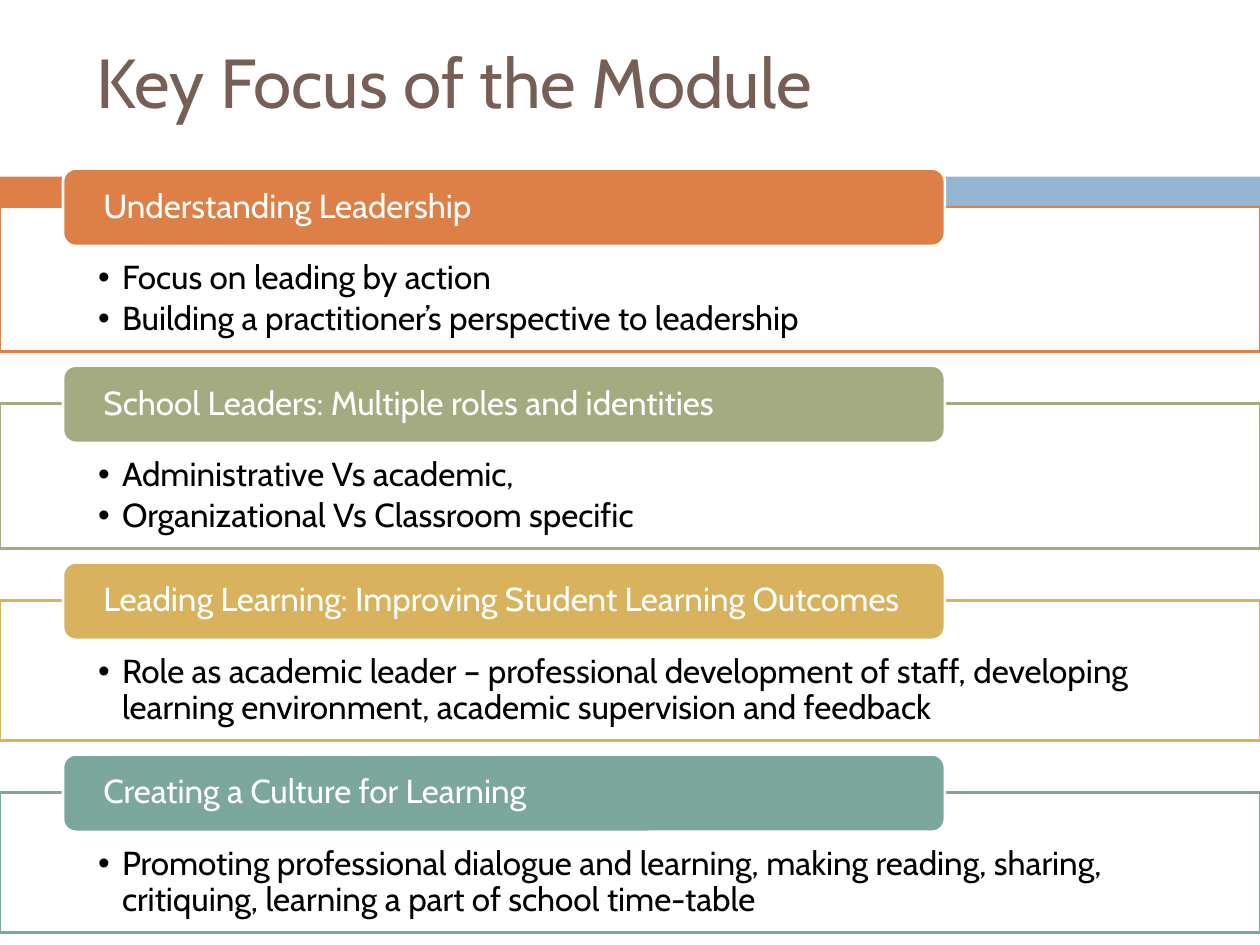
from lxml.etree import SubElement
from pptx import Presentation
from pptx.dml.color import RGBColor
from pptx.enum.shapes import MSO_SHAPE as Preset
from pptx.enum.text import MSO_ANCHOR as Anchor, MSO_AUTO_SIZE as AutoSize, PP_ALIGN as Align
from pptx.oxml.ns import qn
from pptx.util import Cm, Pt

WHITE, BLACK, BROWN = "FFFFFF", "000000", "775F55"
ORANGE, BLUE, GREEN, GOLD, TEAL = "DD8047", "94B6D2", "A5AB81", "D8B25C", "7BA79D"

SECTIONS = [
    (ORANGE, 2.92, "Understanding Leadership",
     ["Focus on leading by action",
      "Building a practitioner’s perspective to leadership"]),
    (GREEN, 2.92, "School Leaders: Multiple roles and identities",
     ["Administrative Vs academic,",
      "Organizational Vs Classroom specific"]),
    (GOLD, 2.82, "Leading Learning: Improving Student Learning Outcomes",
     ["Role as academic leader – professional development of staff, developing "
      "learning environment, academic supervision and feedback"]),
    (TEAL, 2.82, "Creating a Culture for Learning",
     ["Promoting professional dialogue and learning, making reading, sharing, "
      "critiquing, learning a part of school time-table"]),
]
FIRST_TOP, GAP, LABEL_RISE = 4.17, 1.05, 0.77


def color(value):
    return RGBColor.from_string(value)


def apply(target, values):
    for name, value in values.items():
        setattr(target, name, value)


class SlideStyle:
    font = "Cabin"
    text_size = 19
    line_width = 1.5

    def __init__(self, page):
        self.page = page

    def place(self, shape, left, top, width, height):
        apply(shape, {"left": Cm(left), "top": Cm(top),
                      "width": Cm(width), "height": Cm(height)})

    def set_text(self, shape, lines, size, ink, anchor, insets, spacing):
        left, top, right, bottom = (Cm(inset) for inset in insets)
        frame = shape.text_frame
        apply(frame, {"word_wrap": True, "auto_size": AutoSize.NONE,
                      "vertical_anchor": anchor, "margin_left": left,
                      "margin_top": top, "margin_right": right,
                      "margin_bottom": bottom})
        frame.text = "\n".join(lines)
        for para in frame.paragraphs:
            apply(para, {"alignment": Align.LEFT, "space_before": Pt(0), **spacing})
            for span in para.runs:
                apply(span.font, {"name": self.font, "size": Pt(size), "bold": False})
                span.font.color.rgb = color(ink)

    def paint(self, shape, fill, line=None):
        shape.fill.solid()
        shape.fill.fore_color.rgb = color(fill)
        if line:
            shape.line.color.rgb = color(line)
            shape.line.width = Pt(self.line_width)
        else:
            shape.line.fill.background()

    def title(self, text):
        shape = self.page.shapes.title
        self.place(shape, 1.7, 0.64, 22.66, 1.96)
        self.set_text(shape, [text], 39.6, BROWN, Anchor.MIDDLE,
                      (0.25, 0.13, 0.25, 0.13), {})

    def bar(self, left, width, fill):
        shape = self.page.shapes.add_shape(
            Preset.RECTANGLE, Cm(left), Cm(3.56), Cm(width), Cm(0.59))
        shape.shadow.inherit = False
        self.paint(shape, fill)

    def list_box(self, shape, top, height, accent, items):
        self.place(shape, 0, top, 25.4, height)
        self.paint(shape, WHITE, accent)
        tint = shape._element.spPr.find(qn("a:solidFill"))[0]
        SubElement(tint, qn("a:alpha"), val="90000")
        self.set_text(shape, items, self.text_size, BLACK, Anchor.TOP,
                      (1.98, 1.09, 1.98, 0.38),
                      {"line_spacing": 0.9, "space_after": Pt(2.85)})
        for para in shape.text_frame.paragraphs:
            props = para._p.get_or_add_pPr()
            props.set("marL", str(Cm(0.48)))
            props.set("indent", str(-Cm(0.48)))
            SubElement(props, qn("a:buFont"), typeface="Arial")
            SubElement(props, qn("a:buChar"), char="•")

    def label(self, top, fill, text):
        shape = self.page.shapes.add_shape(
            Preset.ROUNDED_RECTANGLE, Cm(1.27), Cm(top), Cm(17.78), Cm(1.56))
        shape.shadow.inherit = False
        self.paint(shape, fill, WHITE)
        self.set_text(shape, [text], self.text_size, WHITE, Anchor.MIDDLE,
                      (0.74, 0, 0.74, 0), {"line_spacing": 0.9})


def main():
    deck = Presentation()
    apply(deck, {"slide_width": Cm(25.4), "slide_height": Cm(19.05)})
    comparison = deck.slide_layouts.get_by_name("Comparison")
    page = deck.slides.add_slide(comparison)
    style = SlideStyle(page)

    style.title("Key Focus of the Module")
    style.bar(0, 1.47, ORANGE)
    style.bar(1.65, 23.75, BLUE)

    bodies = [shape for shape in page.placeholders if shape.placeholder_format.idx]
    top = FIRST_TOP
    for body, (accent, height, heading, items) in zip(bodies, SECTIONS):
        style.list_box(body, top, height, accent, items)
        style.label(top - LABEL_RISE, accent, heading)
        top += height + GAP

    deck.save("out.pptx")


if __name__ == "__main__":
    main()
